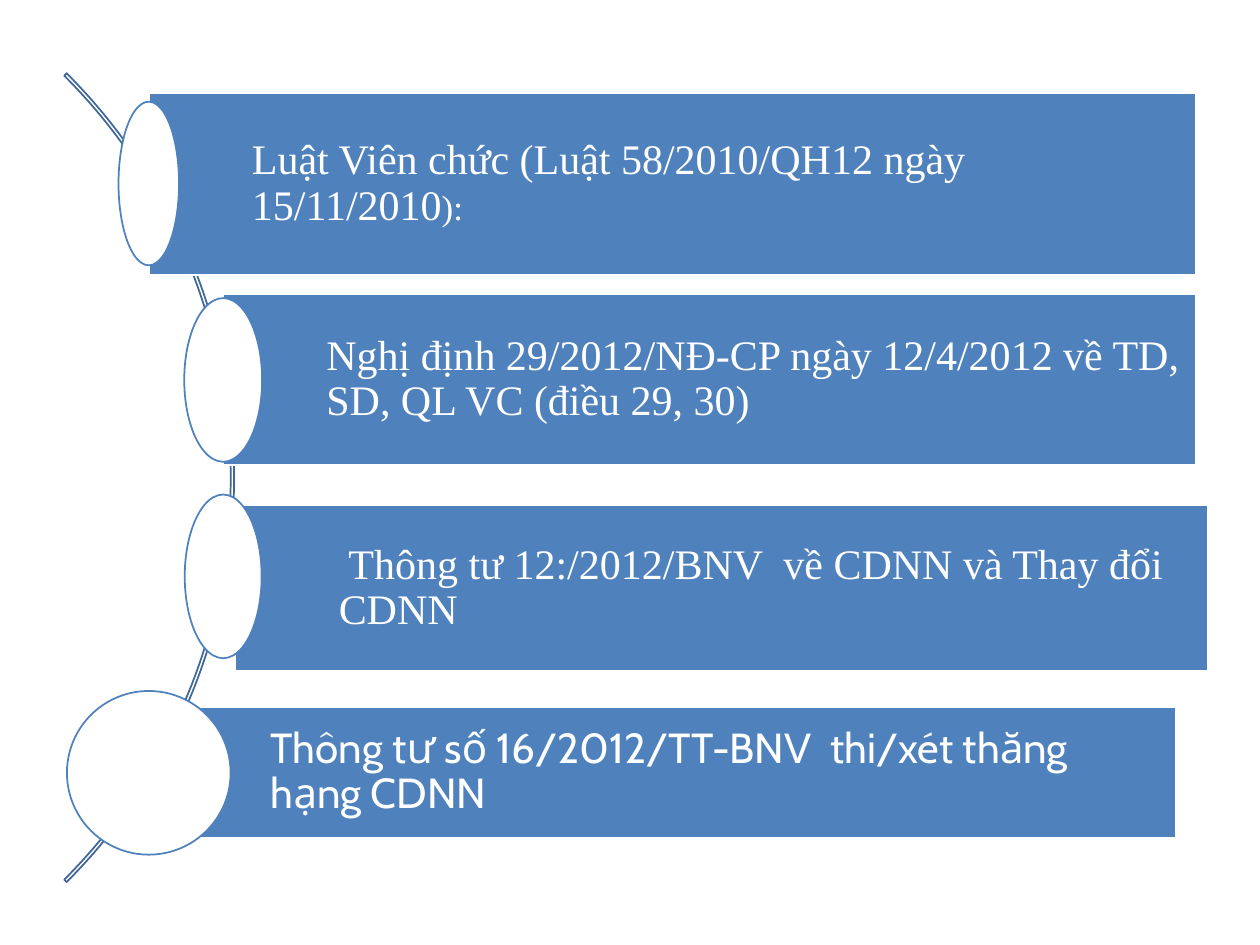
from dataclasses import dataclass

from pptx import Presentation
from pptx.dml.color import RGBColor
from pptx.enum.shapes import MSO_SHAPE as Kind
from pptx.enum.text import MSO_ANCHOR as Anchor, PP_ALIGN as Align
from pptx.shapes.autoshape import Shape
from pptx.shapes.shapetree import SlideShapes
from pptx.util import Cm, Pt

BLUE = RGBColor(0x4F, 0x81, 0xBD)
DARK = RGBColor(0x3F, 0x67, 0x97)
WHITE = RGBColor(0xFF, 0xFF, 0xFF)

SERIF = "Times New Roman"
SANS = "Cabin"

OVAL_TOP = 2.05
OVAL_STEP = 3.96
OVAL_HIGH = 3.3


@dataclass(frozen=True)
class Run:
    text: str
    size: int = 24
    font: str = SERIF


@dataclass(frozen=True)
class Item:
    """A bar (left, top, width, height in cm) and the oval at its left."""
    bar: tuple[float, float, float, float]
    mid: float
    wide: float
    runs: tuple[Run, ...]


ITEMS = (
    Item((3, 1.88, 21.11, 3.66), 3, 1.22,
         (Run("Luật Viên chức (Luật 58/2010/QH12 ngày 15/11/2010"),
          Run("):", 20))),
    Item((4.5, 5.94, 19.61, 3.43), 4.5, 1.57,
         (Run("Nghị định 29/2012/NĐ-CP ngày 12/4/2012 về "
              "TD, SD, QL VC (điều 29, 30)"),)),
    Item((4.75, 10.19, 19.61, 3.33), 4.5, 1.55,
         (Run(" Thông tư 12:/2012/BNV  về CDNN và Thay đổi CDNN"),)),
    Item((3.38, 14.25, 20.32, 2.64), 3, OVAL_HIGH,
         (Run("Thông tư số 16/2012/TT-BNV  thi/xét thăng hạng CDNN",
              font=SANS),)),
)


def add_form(shapes: SlideShapes, kind: Kind,
             box: tuple[float, float, float, float],
             fill: RGBColor | None, line: RGBColor) -> Shape:
    form = shapes.add_shape(kind, *(Cm(side) for side in box))
    form.shadow.inherit = False
    if fill is None:
        form.fill.background()
    else:
        form.fill.solid()
        form.fill.fore_color.rgb = fill
    form.line.color.rgb = line
    form.line.width = Pt(1)
    return form


def add_text(bar: Shape, runs: tuple[Run, ...]) -> None:
    frame = bar.text_frame
    frame.word_wrap = True
    frame.vertical_anchor = Anchor.MIDDLE
    frame.margin_left = Cm(2.08)
    frame.margin_top = frame.margin_right = frame.margin_bottom = Cm(0.18)
    para = frame.paragraphs[0]
    para.alignment = Align.LEFT
    para.line_spacing = 0.9
    for part in runs:
        run = para.add_run()
        run.text = part.text
        run.font.name = part.font
        run.font.size = Pt(part.size)
        run.font.color.rgb = WHITE


def add_item(shapes: SlideShapes, item: Item, top: float) -> None:
    bar = add_form(shapes, Kind.RECTANGLE, item.bar, BLUE, WHITE)
    add_text(bar, item.runs)
    oval = (item.mid - item.wide / 2, top, item.wide, OVAL_HIGH)
    add_form(shapes, Kind.OVAL, oval, WHITE, BLUE)


def add_arc(shapes: SlideShapes) -> None:
    arc = add_form(shapes, Kind.BLOCK_ARC, (-18.34, -1.9, 23.06, 23.06),
                   None, DARK)
    # Start and end angles, then band width
    for spot, value in enumerate((189, 27, 0.003)):
        arc.adjustments[spot] = value


def main() -> None:
    deck = Presentation()
    deck.slide_width, deck.slide_height = Cm(25.4), Cm(19.05)
    shapes = deck.slides.add_slide(deck.slide_layouts[6]).shapes
    add_arc(shapes)
    for row, item in enumerate(ITEMS):
        add_item(shapes, item, OVAL_TOP + row * OVAL_STEP)
    deck.save("out.pptx")


if __name__ == "__main__":
    main()
